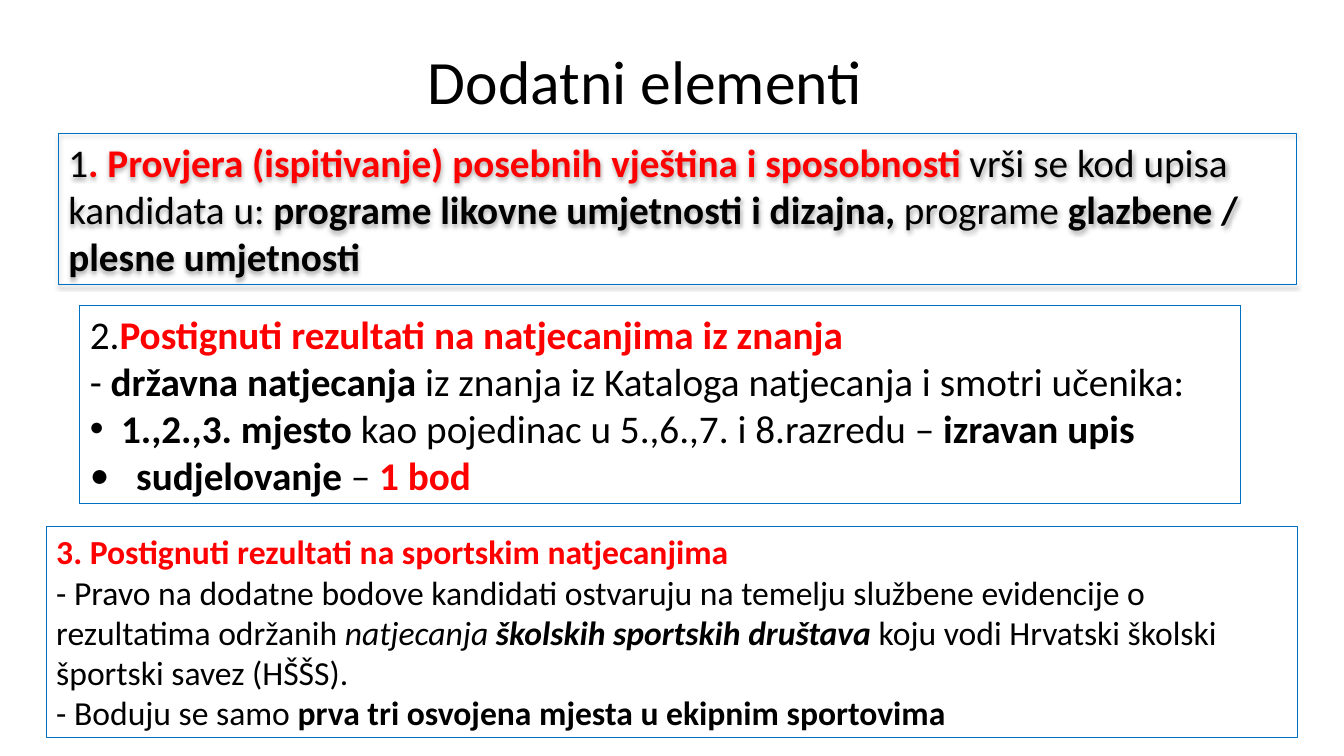
"""Build the slide on additional elements for school enrolment."""
from dataclasses import dataclass

from lxml.etree import SubElement
from pptx import Presentation
from pptx.dml.color import RGBColor
from pptx.enum.shapes import MSO_SHAPE
from pptx.enum.text import MSO_ANCHOR, MSO_AUTO_SIZE, PP_ALIGN
from pptx.oxml.ns import qn
from pptx.util import Inches, Pt

COLORS = {"text": "000000", "accent": "FF0000", "border": "0070C0"}
FONT = "Calibri"
WIDTH, HEIGHT = Inches(13.33), Inches(7.5)


@dataclass
class Span:
    text: str
    bold: bool = False
    italic: bool = False
    color: str = "text"


@dataclass
class Line:
    spans: list[Span]
    indent: float = 0
    bullet_font: str = ""


@dataclass
class Box:
    area: tuple[float, float, float, float]
    size: int
    lines: list[Line]
    shadow: bool = False
    is_list: bool = False


def heading(text: str) -> Span:
    return Span(text, bold=True, color="accent")


def strong(text: str) -> Span:
    return Span(text, bold=True)


TITLE_AREA = (14.25, 3.33, 67.52, 14.53)
BOXES = [
    Box((4.35, 17.6, 92.12, 20), 28, [
        Line([Span("1"),
              heading(". Provjera (ispitivanje) posebnih vještina i sposobnosti "),
              Span("vrši se kod upisa kandidata u: "),
              strong("programe likovne umjetnosti i dizajna, "),
              Span("programe "),
              strong("glazbene / plesne umjetnosti")]),
    ], shadow=True),
    Box((5.93, 40.4, 86.35, 26.2), 28, [
        Line([Span("2."), heading("Postignuti rezultati na natjecanjima iz znanja")]),
        Line([Span("- "), strong("državna natjecanja "),
              Span("iz znanja iz Kataloga natjecanja i smotri učenika:")]),
        Line([strong("1.,2.,3. mjesto "),
              Span("kao pojedinac u 5.,6.,7. i 8.razredu – "),
              strong("izravan upis")], indent=0.31, bullet_font="Arial"),
        Line([strong("sudjelovanje "), Span("– "), heading("1 bod")],
             indent=0.46, bullet_font=FONT),
    ], is_list=True),
    Box((3.45, 69.6, 93.1, 28), 24, [
        Line([heading("3. Postignuti rezultati na sportskim natjecanjima")]),
        Line([Span("- Pravo na dodatne bodove kandidati ostvaruju na temelju "
                   "službene evidencije o rezultatima održanih "),
              Span("natjecanja ", italic=True),
              Span("školskih sportskih društava ", bold=True, italic=True),
              Span("koju vodi Hrvatski školski športski savez (HŠŠS).")]),
        Line([Span("- Boduju se samo "),
              strong("prva tri osvojena mjesta u ekipnim sportovima")]),
    ]),
]


def place(shape, area: tuple[float, float, float, float]) -> None:
    left, top, width, height = area
    shape.left, shape.width = (int(WIDTH * share / 100) for share in (left, width))
    shape.top, shape.height = (int(HEIGHT * share / 100) for share in (top, height))


def write(para, text: str, *, size: int, color: str = "text",
          bold: bool = False, italic: bool = False) -> None:
    run = para.add_run()
    run.text = text
    run.font.name, run.font.size = FONT, Pt(size)
    run.font.bold, run.font.italic = bold, italic
    run.font.color.rgb = RGBColor.from_string(COLORS[color])


def set_bullet(para, line: Line) -> None:
    properties = para._p.get_or_add_pPr()
    properties.set("marL", str(Inches(line.indent)))
    properties.set("indent", str(-Inches(line.indent)))
    if line.bullet_font:
        color = SubElement(properties, qn("a:buClr"))
        SubElement(color, qn("a:srgbClr"), val=COLORS["text"])
        SubElement(properties, qn("a:buFont"), typeface=line.bullet_font)
        SubElement(properties, qn("a:buChar"), char="•")
    else:
        SubElement(properties, qn("a:buNone"))


def add_shadow(shape) -> None:
    effects = shape._element.spPr.find(qn("a:effectLst"))
    outer = SubElement(effects, qn("a:outerShdw"), blurRad=str(Pt(3.1)),
                       dist=str(Pt(1.8)), dir="5400000", rotWithShape="0")
    color = SubElement(outer, qn("a:srgbClr"), val=COLORS["text"])
    SubElement(color, qn("a:alpha"), val="35000")


def fill_box(shape, box: Box) -> None:
    place(shape, box.area)
    shape.fill.background()
    shape.line.color.rgb = RGBColor.from_string(COLORS["border"])
    shape.line.width = Pt(0)
    if not box.is_list:
        shape.shadow.inherit = False
    if box.shadow:
        add_shadow(shape)
    frame = shape.text_frame
    frame.word_wrap = True
    frame.auto_size = MSO_AUTO_SIZE.NONE
    frame.vertical_anchor = MSO_ANCHOR.TOP
    for number, line in enumerate(box.lines):
        para = frame.add_paragraph() if number else frame.paragraphs[0]
        para.alignment = PP_ALIGN.LEFT
        para.space_before = para.space_after = Pt(0)
        set_bullet(para, line)
        for span in line.spans:
            write(para, span.text, size=box.size, color=span.color,
                  bold=span.bold, italic=span.italic)


def main() -> None:
    deck = Presentation()
    deck.slide_width, deck.slide_height = WIDTH, HEIGHT
    page = deck.slides.add_slide(deck.slide_layouts[1])
    title, body = page.shapes.title, page.placeholders[1]
    place(title, TITLE_AREA)
    title.text_frame.vertical_anchor = MSO_ANCHOR.MIDDLE
    title_para = title.text_frame.paragraphs[0]
    title_para.alignment = PP_ALIGN.CENTER
    write(title_para, "Dodatni elementi", size=44)
    for box in BOXES:
        shape = body if box.is_list else page.shapes.add_shape(
            MSO_SHAPE.RECTANGLE, 0, 0, WIDTH, HEIGHT)
        fill_box(shape, box)
    deck.save("out.pptx")


if __name__ == "__main__":
    main()
